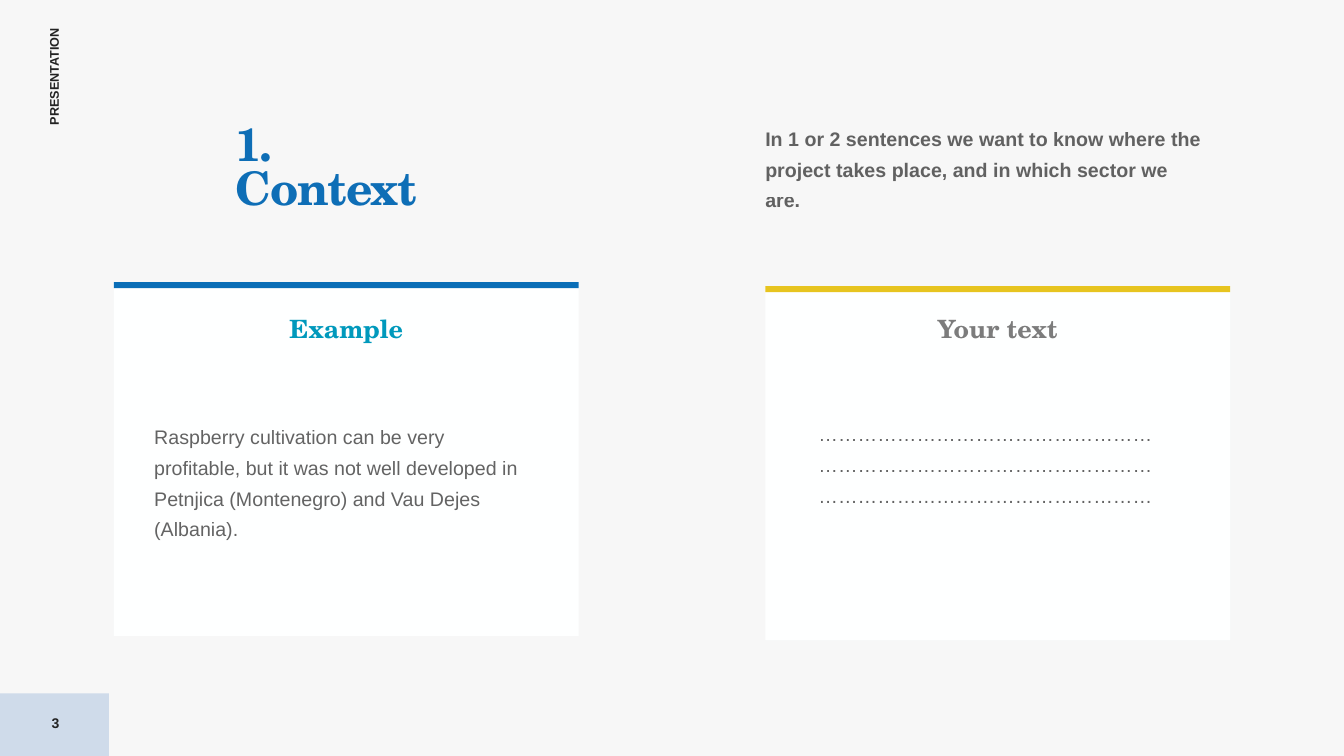
from dataclasses import dataclass

from lxml import etree
from pptx import Presentation
from pptx.dml.color import RGBColor
from pptx.enum import shapes, text
from pptx.oxml.ns import qn
from pptx.util import Inches, Pt


@dataclass(frozen=True)
class Theme:
    sans: str = "Arial"
    serif: str = "TeX Gyre Schola"
    background: str = "F7F7F7"
    card: str = "FEFFFF"
    footer: str = "CFDBEA"
    ink: str = "222222"
    title: str = "0E6EB6"
    blue: str = "0A6EB7"
    yellow: str = "E7C41F"
    teal: str = "0099BC"
    grey: str = "7C7C7C"
    label_size: int = 9
    number_size: int = 10
    body_size: int = 14
    heading_size: int = 18
    title_size: int = 33


DEFAULT_INSETS = (0.1, 0.05, 0.1, 0.05)
BODY_INSETS = (0, 0.04, 0.24, 0.04)
NO_INSETS = (0, 0, 0, 0)
CARD_WIDTH, CARD_HEIGHT = 4.61, 3.51


class SlideBuilder:
    def __init__(self, prs, theme):
        self.theme = theme
        self.s = prs.slides.add_slide(prs.slide_layouts[6])
        fill = self.s.background.fill
        fill.solid()
        fill.fore_color.rgb = RGBColor.from_string(theme.background)

    def rect(self, x, y, w, h, color):
        sp = self.s.shapes.add_shape(
            shapes.MSO_SHAPE.RECTANGLE, Inches(x), Inches(y), Inches(w), Inches(h))
        sp.shadow.inherit = False
        sp.fill.solid()
        sp.fill.fore_color.rgb = RGBColor.from_string(color)
        sp.line.fill.background()

    def text(self, box, words, size, color, font=None, bold=True, centred=False,
             middle=False, insets=DEFAULT_INSETS, spacing=None, wrap=True):
        sp = self.s.shapes.add_textbox(*(Inches(v) for v in box))
        tf = sp.text_frame
        tf.word_wrap = wrap
        tf.margin_left, tf.margin_top, tf.margin_right, tf.margin_bottom = (
            Inches(v) for v in insets)
        if middle:
            tf.vertical_anchor = text.MSO_ANCHOR.MIDDLE
        tf.text = words
        p = tf.paragraphs[0]
        p.alignment = text.PP_ALIGN.CENTER if centred else text.PP_ALIGN.LEFT
        if spacing:
            p.line_spacing = spacing
        r = p.runs[0]
        r.font.name = font or self.theme.sans
        r.font.size = Pt(size)
        r.font.bold = bold
        r.font.color.rgb = RGBColor.from_string(color)
        return sp

    def body(self, box, words, bold=False, centred=False):
        """Add body text in 70 % opaque ink."""
        t = self.theme
        sp = self.text(box, words, t.body_size, t.ink, bold=bold, centred=centred,
                       insets=BODY_INSETS, spacing=1.3)
        for clr in sp.text_frame._txBody.iter(qn("a:srgbClr")):
            etree.SubElement(clr, qn("a:alpha")).set("val", "70000")

    def title(self, box, words):
        t = self.theme
        sp = self.text(box, words, t.title_size, t.title, font=t.serif,
                       insets=(0, 0.21, 0, 0), spacing=0.8)
        r = sp.text_frame.paragraphs[0].runs[0]
        r.font._element.set("spc", "-100")

    def card(self, x, y, heading, accent, heading_color):
        """Add a white panel with an accent bar on top and a centred heading."""
        t = self.theme
        self.rect(x, y, CARD_WIDTH, CARD_HEIGHT, t.card)
        self.rect(x, y, CARD_WIDTH, 0.06, accent)
        self.text((x + 0.58, 3.04, CARD_WIDTH - 1.16, 0.35), heading, t.heading_size,
                  heading_color, font=t.serif, centred=True, middle=True,
                  insets=NO_INSETS, spacing=1.3)

    def frame(self, label, number):
        """Add the vertical label and the page number block."""
        t = self.theme
        self.rect(0, 6.88, 1.08, 0.62, t.footer)
        sp = self.text((-0.06, 0.62, 1.19, 0.25), label, t.label_size, t.ink, wrap=False)
        sp.rotation = 270
        self.text((0, 6.97, 1.1, 0.4), number, t.number_size, t.ink,
                  centred=True, middle=True)


def main():
    prs = Presentation()
    prs.slide_width, prs.slide_height = Inches(13.33), Inches(7.5)
    t = Theme()
    b = SlideBuilder(prs, t)

    b.frame("PRESENTATION", "3")
    b.title((2.34, 1.04, 2.2, 0.89), "1. Context")
    b.body((7.59, 1.15, CARD_WIDTH, 0.66),
           "In 1 or 2 sentences we want to know where the project takes place, "
           "and in which sector we are.", bold=True)

    b.card(1.13, 2.8, "Example", t.blue, t.teal)
    b.body((1.53, 4.11, 4.03, 0.97),
           "Raspberry cultivation can be very profitable, but it was not well "
           "developed in Petnjica (Montenegro) and Vau Dejes (Albania).")

    b.card(7.59, 2.84, "Your text", t.yellow, t.grey)
    b.body((8.08, 4.08, 3.63, 0.97), "…" * 51, centred=True)

    prs.save("out.pptx")


if __name__ == "__main__":
    main()
